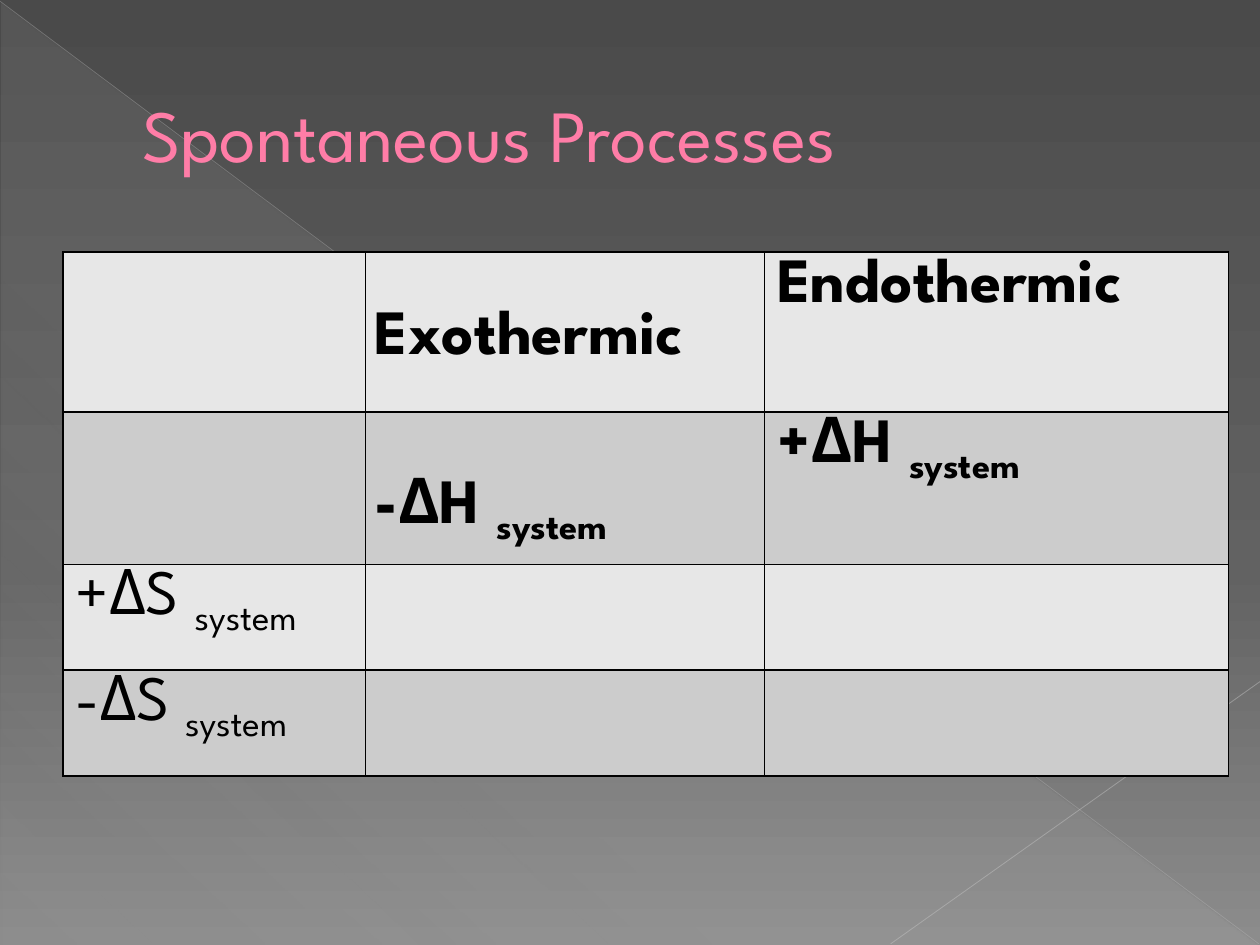
from dataclasses import dataclass

from lxml import etree
from pptx import Presentation
from pptx.dml.color import RGBColor
from pptx.enum.shapes import MSO_CONNECTOR, MSO_SHAPE
from pptx.enum.text import MSO_ANCHOR, MSO_AUTO_SIZE, PP_ALIGN
from pptx.oxml.ns import qn
from pptx.util import Pt

LINE = MSO_CONNECTOR.STRAIGHT
WEDGE = MSO_SHAPE.RIGHT_TRIANGLE
MIDDLE = MSO_ANCHOR.MIDDLE
NO_FIT = MSO_AUTO_SIZE.NONE
LEFT = PP_ALIGN.LEFT

FONT = "League Spartan"
HEX = {
    "top": "4A4A4A", "mid": "626262", "base": "8C8C8C",
    "wedge": "D2D2D2", "fall": "BFBFBF", "rise": "C6C6C6",
    "title": "FF7DA7", "edge": "B12761", "ink": "000000",
    "light": "E7E7E7", "dark": "CCCCCC",
}


@dataclass
class Stop:
    pos: int
    color: str
    alpha: int = 100


@dataclass
class Stroke:
    start: tuple[float, float]
    end: tuple[float, float]
    color: str
    width: float
    alpha: int


@dataclass
class Label:
    text: str
    sub: str = ""
    bold: bool = True
    low: bool = False  # double line spacing and tight margins


STROKES = [
    Stroke((0, 0.7), (719.3, 539.3), "fall", 0.39, 35),
    Stroke((720, 389.5), (509, 539.3), "rise", 0.47, 45),
]
COLS = [173, 228, 265]
ROWS = [91.5, 87, 60.5, 60.5]
LABELS = {
    (0, 1): Label("Exothermic", low=True),
    (0, 2): Label("Endothermic"),
    (1, 1): Label("-ΔH ", "system", low=True),
    (1, 2): Label("+ΔH ", "system"),
    (2, 0): Label("+ΔS ", "system", bold=False),
    (3, 0): Label("-ΔS ", "system", bold=False),
}


def add_color(node, color: str, alpha: int = 100) -> None:
    tint = etree.SubElement(node, qn("a:srgbClr"), val=HEX[color])
    if alpha < 100:
        etree.SubElement(tint, qn("a:alpha"), val=str(alpha * 1000))


def add_line(node, tag: str, color: str, width: float, alpha: int = 100) -> None:
    line = etree.SubElement(node, qn(tag), w=str(Pt(width)))
    add_color(etree.SubElement(line, qn("a:solidFill")), color, alpha)


def set_grad(fill, root, angle: int, stops: list[Stop]) -> None:
    fill.gradient()
    fill.gradient_angle = 360 - angle
    group = root.xpath(".//a:gsLst")[0]
    for old in list(group):
        group.remove(old)
    for stop in stops:
        node = etree.SubElement(group, qn("a:gs"), pos=str(stop.pos * 1000))
        add_color(node, stop.color, stop.alpha)


def add_run(para, text: str, size: float, color: str, bold: bool = False):
    run = para.add_run()
    run.text = text
    run.font.name = FONT
    run.font.size = Pt(size)
    run.font.bold = bold
    run.font.color.rgb = RGBColor.from_string(HEX[color])
    return run


def draw_back(slide) -> None:
    set_grad(slide.background.fill, slide._element, 90,
             [Stop(0, "top"), Stop(60, "mid"), Stop(100, "base")])
    wedge = slide.shapes.add_shape(WEDGE, Pt(0.7), Pt(1.4), Pt(718.6), Pt(538.6))
    wedge.shadow.inherit = False
    wedge.line.fill.background()
    set_grad(wedge.fill, wedge._element, 133,
             [Stop(0, "wedge", 10), Stop(70, "wedge", 8), Stop(100, "wedge", 1)])
    for stroke in STROKES:
        ends = [Pt(v) for v in stroke.start + stroke.end]
        props = slide.shapes.add_connector(LINE, *ends)._element.spPr
        add_line(props, "a:ln", stroke.color, stroke.width, stroke.alpha)
        etree.SubElement(props, qn("a:effectLst"))


def draw_title(slide) -> None:
    title = slide.shapes.title
    slide.shapes._spTree.append(title._element)  # in front of the backdrop
    title.left, title.top, title.width, title.height = Pt(36), Pt(21), Pt(648), Pt(110)
    frame = title.text_frame
    frame.vertical_anchor = MIDDLE
    frame.auto_size = NO_FIT
    para = frame.paragraphs[0]
    para.alignment = LEFT
    props = para._p.get_or_add_pPr()
    props.set("marL", str(Pt(38)))
    props.set("indent", "0")
    run = add_run(para, "Spontaneous Processes", 42, "title")
    edge = etree.Element("edge")
    add_line(edge, "a:ln", "edge", 0.5)
    run.font._element.insert(0, edge[0])


def fill_cell(cell, label: Label) -> None:
    para = cell.text_frame.paragraphs[0]
    if label.low:
        para.line_spacing = 2.0
        cell.margin_left = cell.margin_right = Pt(5)
        cell.margin_top = cell.margin_bottom = Pt(0)
    add_run(para, label.text, 36, "ink", label.bold)
    if label.sub:
        run = add_run(para, label.sub, 36, "ink", label.bold)
        run.font._element.set("baseline", "-25000")


def draw_table(slide) -> None:
    table = slide.shapes.add_table(len(ROWS), len(COLS), Pt(36), Pt(144),
                                   Pt(sum(COLS)), Pt(sum(ROWS))).table
    table.first_row = table.horz_banding = False
    for col, width in zip(table.columns, COLS):
        col.width = Pt(width)
    for r, height in enumerate(ROWS):
        table.rows[r].height = Pt(height)
        shade = "dark" if r % 2 else "light"
        for c in range(len(COLS)):
            cell = table.cell(r, c)
            for side in "LRTB":
                add_line(cell._tc.get_or_add_tcPr(), f"a:ln{side}", "ink", 1)
            cell.fill.solid()
            cell.fill.fore_color.rgb = RGBColor.from_string(HEX[shade])
            if (r, c) in LABELS:
                fill_cell(cell, LABELS[r, c])


def main() -> None:
    deck = Presentation()
    deck.slide_width, deck.slide_height = Pt(720), Pt(540)
    slide = deck.slides.add_slide(deck.slide_layouts[5])
    draw_back(slide)
    draw_title(slide)
    draw_table(slide)
    deck.save("out.pptx")


if __name__ == "__main__":
    main()
